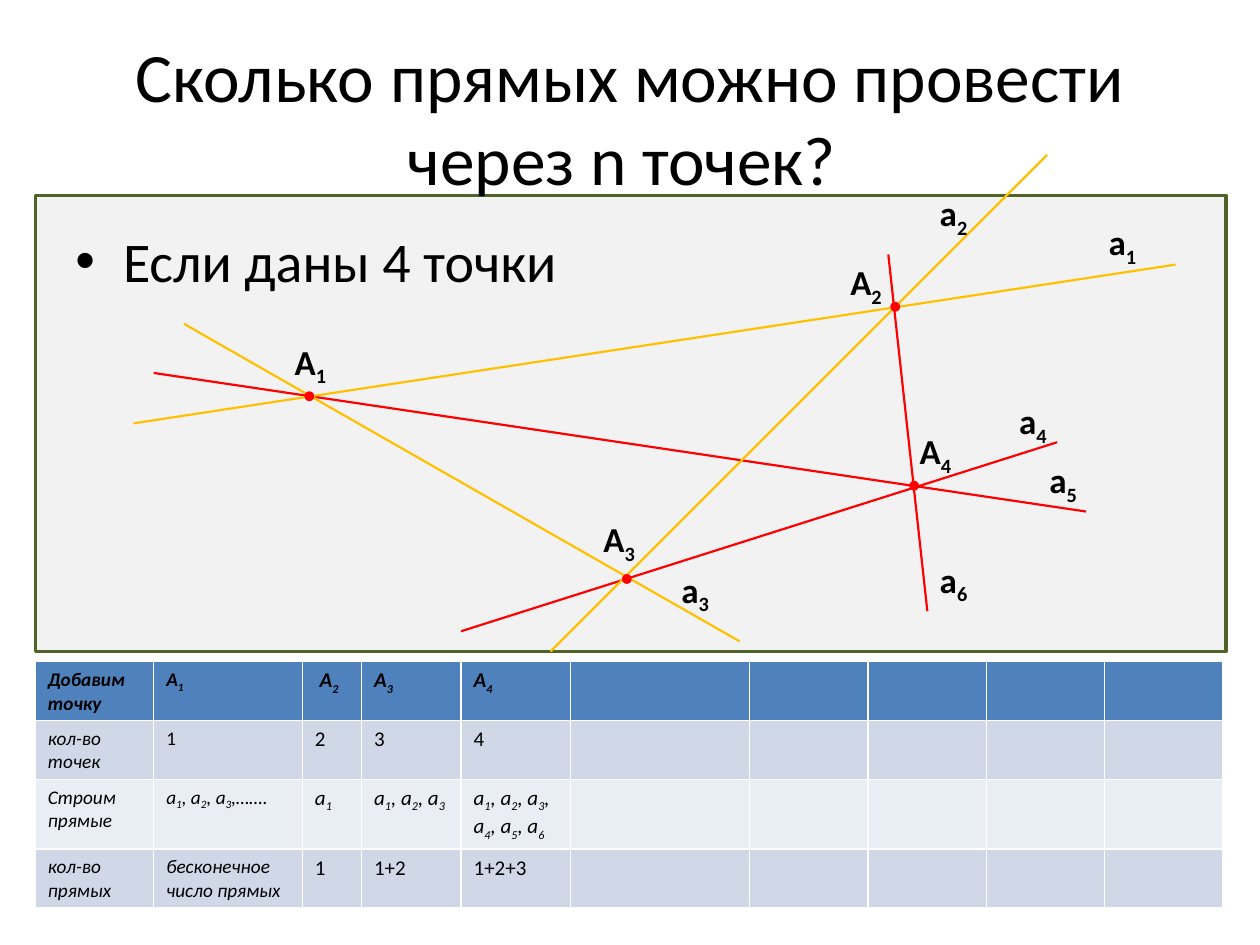
from typing import NamedTuple

from lxml.etree import SubElement
from pptx import Presentation
from pptx.dml.color import RGBColor
from pptx.enum.shapes import MSO_CONNECTOR as Connector, MSO_SHAPE as Shape
from pptx.enum.text import MSO_ANCHOR as Anchor, PP_ALIGN as Align
from pptx.oxml.ns import qn
from pptx.util import Inches, Pt

BLACK = RGBColor(0x00, 0x00, 0x00)
RED = RGBColor(0xFF, 0x00, 0x00)
AMBER = RGBColor(0xFF, 0xC0, 0x00)
GREEN = RGBColor(0x4F, 0x62, 0x28)
PANEL = RGBColor(0xF2, 0xF2, 0xF2)
HEADER = RGBColor(0x4F, 0x81, 0xBD)
BAND_DARK = RGBColor(0xD0, 0xD8, 0xE8)
BAND_LIGHT = RGBColor(0xE9, 0xED, 0xF4)
ROW_FILLS = (HEADER, BAND_DARK, BAND_LIGHT, BAND_DARK)
DOT = 0.05


class Line(NamedTuple):
    x1: float
    y1: float
    x2: float
    y2: float
    color: RGBColor


class Point(NamedTuple):
    left: float
    top: float


class Label(NamedTuple):
    text: str
    left: float
    top: float


LINES = (
    Line(7.36, 4.85, 7.05, 2.02, RED),
    Line(1.22, 2.96, 8.62, 4.06, RED),
    Line(3.66, 5.01, 8.39, 3.51, RED),
    Line(1.46, 2.57, 5.87, 5.09, AMBER),
    Line(4.37, 5.17, 8.31, 1.23, AMBER),
    Line(1.06, 3.36, 9.33, 2.1, AMBER),
)
POINTS = (Point(2.43, 3.12), Point(7.08, 2.41), Point(4.95, 4.57), Point(7.23, 3.83))
LABELS = (
    Label("А_1", 2.24, 2.65),
    Label("А_2", 6.65, 2.02),
    Label("А_3", 4.69, 4.06),
    Label("А_4", 7.2, 3.36),
    Label("а_1", 8.7, 1.7),
    Label("а_2", 7.36, 1.47),
    Label("а_3", 5.31, 4.46),
    Label("а_4", 7.99, 3.12),
    Label("а_5", 8.23, 3.59),
    Label("а_6", 7.36, 4.38),
)
COLUMNS = (0.94, 1.18, 0.47, 0.79, 0.87, 1.42, 0.94, 0.94, 0.94, 0.94)
ROWS = (0.41, 0.41, 0.48, 0.41)
CELLS = (
    ("Добавим точку", "А_1", " А_2", "А_3", "А_4"),
    ("кол-во точек", "1", "2", "3", "4"),
    ("Строим прямые", "а_1, а_2, а_3,…….", "а_1", "а_1, а_2, а_3",
     "а_1, а_2, а_3, а_4, а_5, а_6"),
    ("кол-во прямых", "бесконечное число прямых", "1", "1+2", "1+2+3"),
)


def add_run(p, text: str, size: float, subscript: bool = False, **extra) -> None:
    r = p.add_run()
    r.text = text
    values = {"name": "Calibri", "size": Pt(size), **extra}
    for name, value in values.items():
        setattr(r.font, name, value)
    r.font.color.rgb = BLACK
    if subscript:
        r.font._element.set("baseline", "-25000")


def write(p, text: str, size: float, **extra) -> None:
    """Write text in which the character after each underscore is a subscript."""
    head, *rest = text.split("_")
    add_run(p, head, size, **extra)
    for part in rest:
        add_run(p, part[0], size, subscript=True, **extra)
        if part[1:]:
            add_run(p, part[1:], size, **extra)


def add_text(s, left: float, top: float, width: float, height: float,
             text: str, size: float, wrap: bool = True, **extra):
    tf = s.shapes.add_textbox(
        Inches(left), Inches(top), Inches(width), Inches(height)).text_frame
    tf.word_wrap = wrap
    write(tf.paragraphs[0], text, size, **extra)
    return tf


def add_solid(s, kind: Shape, left: float, top: float, width: float, height: float,
              fill: RGBColor, line: RGBColor):
    sp = s.shapes.add_shape(
        kind, Inches(left), Inches(top), Inches(width), Inches(height))
    sp.shadow.inherit = False
    sp.fill.solid()
    sp.fill.fore_color.rgb = fill
    sp.line.color.rgb = line
    sp.line.width = Pt(2)
    return sp


def add_line(s, line: Line) -> None:
    c = s.shapes.add_connector(Connector.STRAIGHT, Inches(line.x1), Inches(line.y1),
                               Inches(line.x2), Inches(line.y2))
    c.line.color.rgb = line.color
    c.line.width = Pt(1.25)
    SubElement(c._element.spPr, qn("a:effectLst"))


def set_bullet(p) -> None:
    pPr = p._p.get_or_add_pPr()
    pPr.set("marL", str(Inches(0.38)))
    pPr.set("indent", str(-Inches(0.38)))
    SubElement(pPr, qn("a:buFont"), typeface="Arial")
    SubElement(pPr, qn("a:buChar"), char="•")


def add_points_table(s) -> None:
    table = s.shapes.add_table(len(ROWS), len(COLUMNS), Inches(0.28), Inches(5.25),
                               Inches(sum(COLUMNS)), Inches(sum(ROWS))).table
    for column, width in zip(table.columns, COLUMNS):
        column.width = Inches(width)
    for i, (row, height, fill) in enumerate(zip(table.rows, ROWS, ROW_FILLS)):
        row.height = Inches(height)
        for cell in row.cells:
            cell.fill.solid()
            cell.fill.fore_color.rgb = fill
        for j, (cell, text) in enumerate(zip(row.cells, CELLS[i])):
            write(cell.text_frame.paragraphs[0], text, 11 if j < 2 else 12,
                  bold=i == 0, italic=not text[0].isdigit())


def main() -> None:
    prs = Presentation()
    prs.slide_width, prs.slide_height = Inches(10), Inches(7.5)
    s = prs.slides.add_slide(prs.slide_layouts[6])

    panel = add_solid(s, Shape.RECTANGLE, 0.28, 1.55, 9.45, 3.62, PANEL, GREEN)
    color = panel.fill._xPr.find(qn("a:solidFill"))[0]
    SubElement(color, qn("a:alpha"), val="96000")

    for line in LINES:
        add_line(s, line)

    title = add_text(s, 0.5, 0.3, 9, 1.25,
                     "Сколько прямых можно провести через n точек? ", 39.6)
    title.vertical_anchor = Anchor.MIDDLE
    title.paragraphs[0].alignment = Align.CENTER

    body = add_text(s, 0.5, 1.75, 9, 0.66, "Если даны 4 точки", 32)
    set_bullet(body.paragraphs[0])

    add_points_table(s)
    for point in POINTS:
        add_solid(s, Shape.OVAL, point.left, point.top, DOT, DOT, RED, RED)
    for label in LABELS:
        add_text(s, label.left, label.top, 0.47, 0.55, label.text, 20,
                 wrap=False, bold=True)

    prs.save("out.pptx")


if __name__ == "__main__":
    main()
